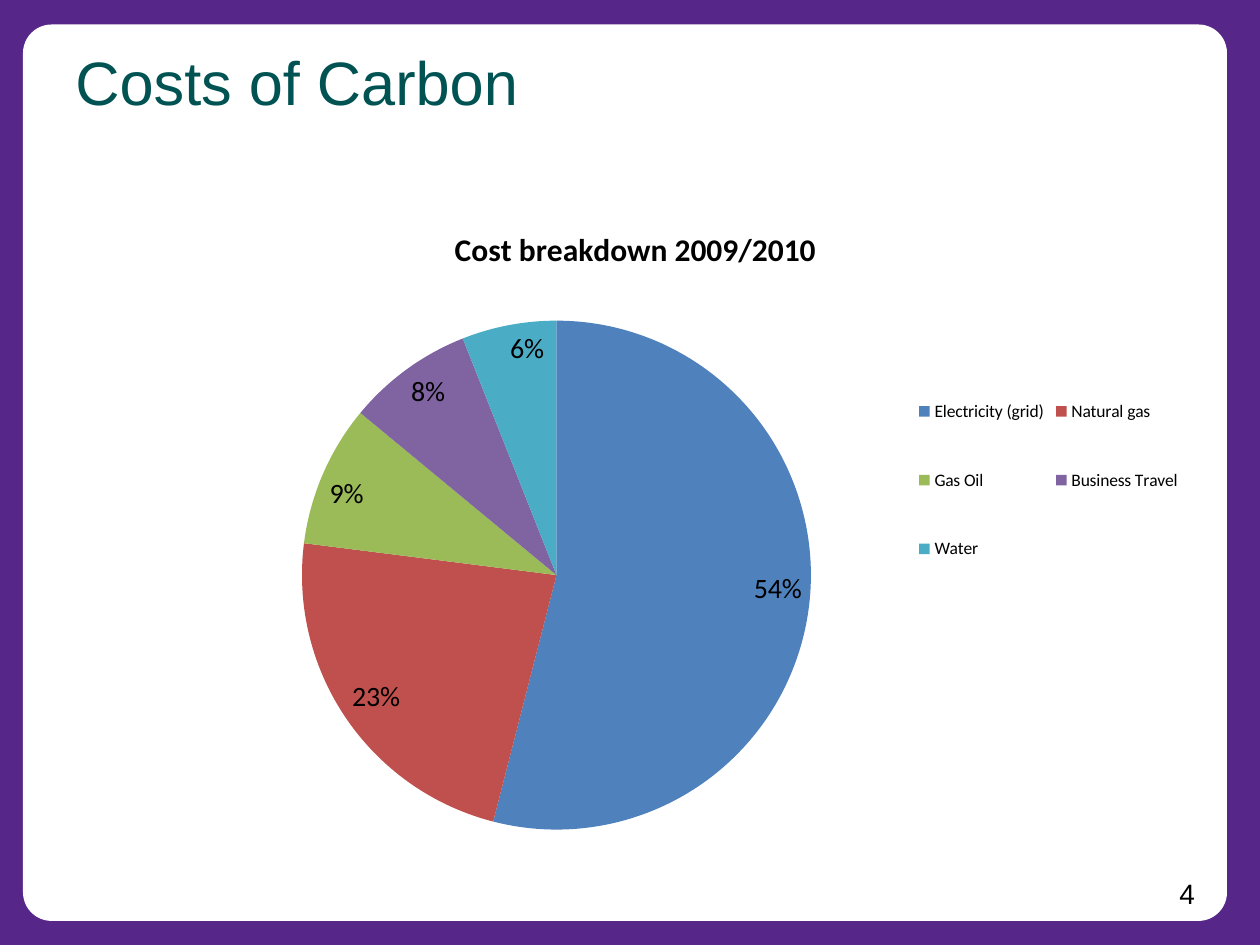
from lxml import etree
from pptx import Presentation
from pptx.chart.data import CategoryChartData
from pptx.dml.color import RGBColor
from pptx.enum.chart import XL_CHART_TYPE, XL_LABEL_POSITION, XL_LEGEND_POSITION
from pptx.enum.shapes import MSO_SHAPE
from pptx.enum.text import MSO_ANCHOR, PP_ALIGN
from pptx.oxml.ns import qn
from pptx.util import Cm, Pt

PIE = XL_CHART_TYPE.PIE
INSIDE_END = XL_LABEL_POSITION.INSIDE_END
LEGEND_RIGHT = XL_LEGEND_POSITION.RIGHT
ROUNDED = MSO_SHAPE.ROUNDED_RECTANGLE
TOP, MIDDLE = MSO_ANCHOR.TOP, MSO_ANCHOR.MIDDLE
LEFT, RIGHT = PP_ALIGN.LEFT, PP_ALIGN.RIGHT

# Content
TITLE = "Costs of Carbon"
PAGE = "4"
CHART_TITLE = "Cost breakdown 2009/2010"
COSTS = [  # category, share, colour
    ("Electricity (grid)", 54, "4F81BD"),
    ("Natural gas", 23, "C0504D"),
    ("Gas Oil", 9, "9BBB59"),
    ("Business Travel", 8, "8064A2"),
    ("Water", 6, "4BACC6"),
]
THEME = {
    "frame": "562689", "panel": "FFFFFF", "title": "005352", "text": "000000",
    "font": "Arial", "chart_font": "Calibri",
    "title_pt": 35, "page_pt": 16, "chart_title_pt": 18, "label_pt": 16, "legend_pt": 10,
}


def rgb(name):
    return RGBColor.from_string(THEME[name])


def style_font(font, face, size, color="text", bold=False):
    font.name = THEME[face]
    font.size = Pt(THEME[size])
    font.color.rgb = rgb(color)
    font.bold = bold


def add_text(s, text, box, size, color, align, anchor):
    tf = s.shapes.add_textbox(*map(Cm, box)).text_frame
    tf.word_wrap = True
    tf.vertical_anchor = anchor
    tf.text = text
    p = tf.paragraphs[0]
    p.alignment = align
    style_font(p.runs[0].font, "font", size, color)


def set_layout(parent, index, inner=False, **fractions):
    """Place a chart part by fractions of the chart area."""
    for old in parent.findall(qn("c:layout")):
        parent.remove(old)
    layout = etree.Element(qn("c:layout"))
    manual = etree.SubElement(layout, qn("c:manualLayout"))
    settings = [("layoutTarget", "inner")] if inner else []
    settings += [("xMode", "edge"), ("yMode", "edge"), *fractions.items()]
    for tag, value in settings:
        etree.SubElement(manual, qn(f"c:{tag}")).set("val", str(value))
    parent.insert(index, layout)


def add_cost_chart(s, box):
    data = CategoryChartData()
    data.categories = [name for name, _, _ in COSTS]
    data.add_series("Series 1", [share for _, share, _ in COSTS])
    chart = s.shapes.add_chart(PIE, *map(Cm, box), data).chart
    style_font(chart.font, "chart_font", "legend_pt")

    # Chart title
    chart.has_title = True
    tf = chart.chart_title.text_frame
    tf.text = CHART_TITLE
    style_font(tf.paragraphs[0].runs[0].font, "chart_font", "chart_title_pt", bold=True)
    set_layout(chart.chart_title._element, 1, x=0.34, y=0.04)

    # Slices and percentages
    plot = chart.plots[0]
    plot.vary_by_categories = True
    for i, (_, _, color) in enumerate(COSTS):
        fill = plot.series[0].points[i].format.fill
        fill.solid()
        fill.fore_color.rgb = RGBColor.from_string(color)
    plot.has_data_labels = True
    labels = plot.data_labels
    labels.show_percentage, labels.show_value = True, False
    labels.number_format, labels.number_format_is_linked = "0%", False
    labels.position = INSIDE_END
    style_font(labels.font, "chart_font", "label_pt")
    set_layout(chart._chartSpace.chart.plotArea, 0, inner=True, x=0.21, y=0.19, w=0.45, h=0.78)

    # Legend
    chart.has_legend = True
    legend = chart.legend
    legend.position = LEGEND_RIGHT
    legend.include_in_layout = False
    style_font(legend.font, "chart_font", "legend_pt")
    set_layout(legend._element, 1, x=0.75, y=0.24, w=0.24, h=0.39)


prs = Presentation()
prs.slide_width, prs.slide_height = Cm(25.4), Cm(19.05)
s = prs.slides.add_slide(prs.slide_layouts[6])

# Coloured frame and white panel
s.background.fill.solid()
s.background.fill.fore_color.rgb = rgb("frame")
panel = s.shapes.add_shape(ROUNDED, Cm(0.5), Cm(0.53), Cm(24.2), Cm(18))
panel.adjustments[0] = 0.03
panel.shadow.inherit = False
panel.fill.solid()
panel.fill.fore_color.rgb = rgb("panel")
panel.line.color.rgb = rgb("panel")
panel.line.width = Pt(2)

# Page number, heading and chart
add_text(s, PAGE, (18.54, 17.53, 5.8, 0.94), "page_pt", "text", RIGHT, MIDDLE)
add_text(s, TITLE, (1.27, 0.76, 17.27, 2.57), "title_pt", "title", LEFT, TOP)
add_cost_chart(s, (1.3, 3.94, 22.8, 13.2))

prs.save("out.pptx")
